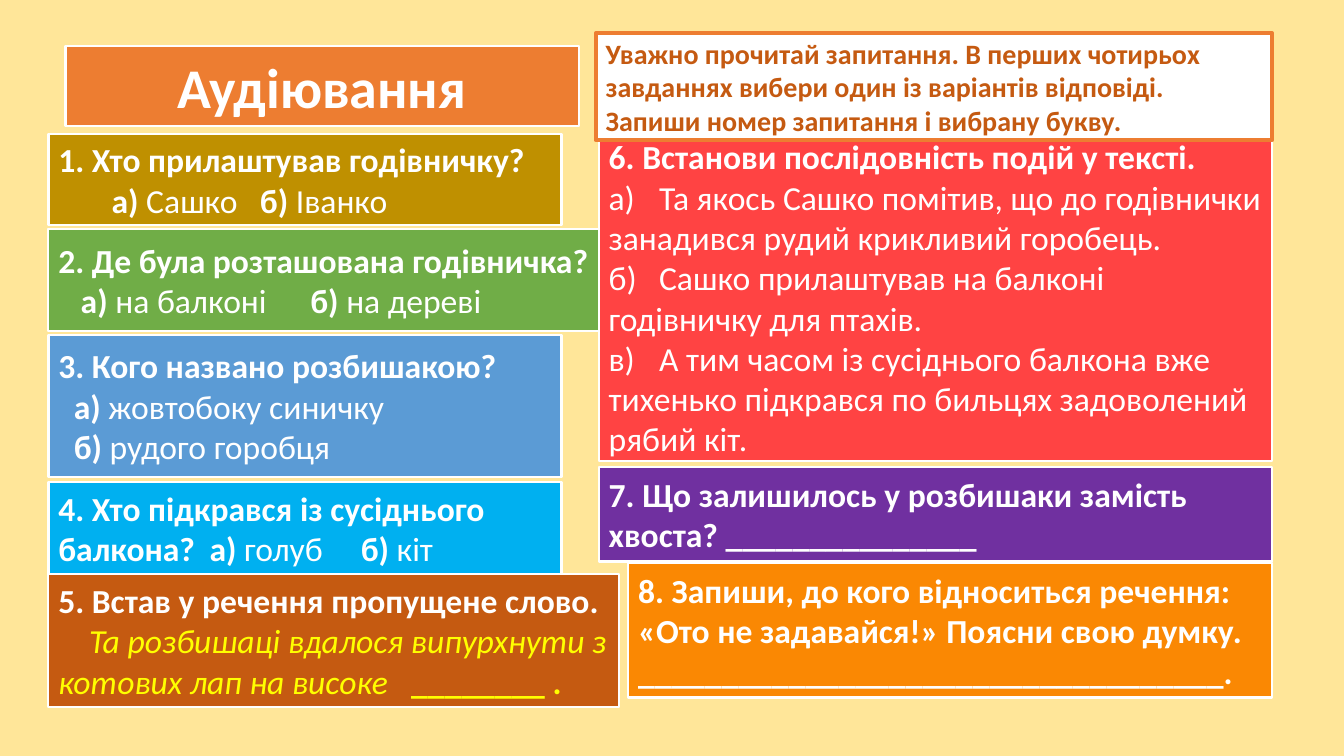
from dataclasses import dataclass

from lxml.etree import SubElement
from pptx import Presentation
from pptx.dml.color import RGBColor as RGB
from pptx.enum.shapes import MSO_SHAPE as SHAPE
from pptx.enum.text import MSO_ANCHOR as ANCHOR, PP_ALIGN as ALIGN
from pptx.oxml.ns import qn
from pptx.util import Pt


@dataclass(frozen=True)
class Theme:
    font: str = "Calibri"
    title_size: int = 40
    body_size: int = 24
    task_size: int = 20
    background: str = "FFE699"
    white: str = "FFFFFF"
    yellow: str = "FFFF00"
    orange: str = "ED7D31"
    brown: str = "C55A11"
    gold: str = "BF9000"
    green: str = "70AD47"
    blue: str = "5B9BD5"
    cyan: str = "00B0F0"
    red: str = "FF4343"
    purple: str = "7030A0"
    amber: str = "FA8803"


THEME = Theme()


def color(name):
    return RGB.from_string(getattr(THEME, name))


def add_box(slide, box, fill, line="white", line_width=1.5):
    sp = slide.shapes.add_shape(SHAPE.RECTANGLE, *map(Pt, box))
    sp.shadow.inherit = False
    sp.fill.solid()
    sp.fill.fore_color.rgb = color(fill)
    sp.line.color.rgb = color(line)
    sp.line.width = Pt(line_width)
    sp.text_frame.word_wrap = True
    sp.text_frame.vertical_anchor = ANCHOR.MIDDLE
    return sp.text_frame


def add_run(p, text, size=THEME.body_size, ink="white", bold=False, italic=False):
    r = p.add_run()
    r.text = text
    r.font.name = THEME.font
    r.font.size = Pt(size)
    r.font.color.rgb = color(ink)
    r.font.bold = bold
    r.font.italic = italic


def set_stops(p, indent=0, tabs=()):
    """Set the first-line indent and the left tab stops, in points."""
    pPr = p._p.get_or_add_pPr()
    pPr.set("marL", "0")
    pPr.set("indent", str(Pt(indent)))
    if tabs:
        stops = SubElement(pPr, qn("a:tabLst"))
        for tab in tabs:
            SubElement(stops, qn("a:tab"), pos=str(Pt(tab)), algn="l")


def add_question(slide, box, fill, heading):
    tf = add_box(slide, box, fill)
    p = tf.paragraphs[0]
    p.alignment = ALIGN.LEFT
    add_run(p, heading, bold=True)
    return tf


def add_line(tf, indent=0, tabs=()):
    p = tf.add_paragraph()
    p.alignment = ALIGN.LEFT
    set_stops(p, indent, tabs)
    return p


def add_choices(p, *choices):
    """Write pairs of a bold letter and a plain answer."""
    for letter, answer in choices:
        add_run(p, letter, bold=True)
        add_run(p, answer)


def add_title(slide, box):
    p = add_box(slide, box, "orange").paragraphs[0]
    p.alignment = ALIGN.CENTER
    add_run(p, "Аудіювання", size=THEME.title_size, bold=True)


def add_task(slide, box):
    p = add_box(slide, box, "white", "orange", 3).paragraphs[0]
    p.alignment = ALIGN.LEFT
    add_run(p, "Уважно прочитай запитання. В перших чотирьох завданнях вибери один із "
               "варіантів відповіді. Запиши номер запитання і вибрану букву.",
            size=THEME.task_size, ink="brown", bold=True)


def add_left_column(slide, box):
    x, y, w, h = box

    tf = add_question(slide, (x, y + h - 95, w + 41, 95), "brown",
                      "5. Встав у речення пропущене слово.")
    p = add_line(tf, indent=22, tabs=[246])
    add_run(p, "Та розбишаці вдалося випурхнути з котових лап на високе\t",
            ink="yellow", italic=True)
    add_run(p, "________ .", ink="yellow", bold=True)

    tf = add_question(slide, (x, y, w, 64.8), "gold", "1. Хто прилаштував годівничку?")
    add_choices(add_line(tf, indent=38, tabs=[187.5]), ("а) ", "Сашко\t"), ("б) ", "Іванко"))

    tf = add_question(slide, (x, y + 67.7, w + 26.6, 72.7), "green",
                      "2. Де була розташована годівничка?")
    add_choices(add_line(tf, indent=16, tabs=[182]),
                ("а) ", "на балконі\t"), ("б) ", "на дереві"))

    tf = add_question(slide, (x, y + 248.4, w, 65.5), "cyan",
                      "4. Хто підкрався із сусіднього балкона?")
    p = tf.paragraphs[0]
    set_stops(p, tabs=[125, 255])
    add_choices(p, ("\tа) ", "голуб\t"), ("б) ", "кіт"))

    tf = add_question(slide, (x, y + 143.3, w, 101.5), "blue", "3. Кого названо розбишакою?")
    for choice in [("а) ", "жовтобоку синичку"), ("б) ", "рудого горобця")]:
        add_choices(add_line(tf, indent=11), choice)


def add_right_column(slide, box):
    x, y, w, h = box
    add_question(slide, (x, y + 237.6, w, 67.7), "purple",
                 "7. Що залишилось у розбишаки замість хвоста? _______________")

    tf = add_question(slide, (x + 21, y + h - 95.8, w - 21, 95.8), "amber",
                      "8. Запиши, до кого відноситься речення: "
                      "«Ото не задавайся!» Поясни свою думку.")
    add_run(add_line(tf), "___________________________________.", bold=True)

    tf = add_question(slide, (x, y, w, 233.3), "red",
                      "6. Встанови послідовність подій у тексті.")
    for event in [
        "а)\tТа якось Сашко помітив, що до годівнички занадився рудий крикливий горобець.",
        "б)\tСашко прилаштував на балконі годівничку для птахів.",
        "в)\tА тим часом із сусіднього балкона вже тихенько підкрався по бильцях "
        "задоволений рябий кіт.",
    ]:
        add_run(add_line(tf, tabs=[30]), event)


def main():
    prs = Presentation()
    prs.slide_width, prs.slide_height = Pt(960), Pt(540)
    slide = prs.slides.add_slide(prs.slide_layouts[6])
    slide.background.fill.solid()
    slide.background.fill.fore_color.rgb = color("background")

    add_left_column(slide, (34.6, 95.8, 366.5, 409))
    add_title(slide, (46.8, 33.1, 366.5, 56.9))
    add_right_column(slide, (427.7, 95.8, 481, 402.5))
    add_task(slide, (425.5, 23.8, 483.1, 76.3))
    prs.save("out.pptx")


if __name__ == "__main__":
    main()
